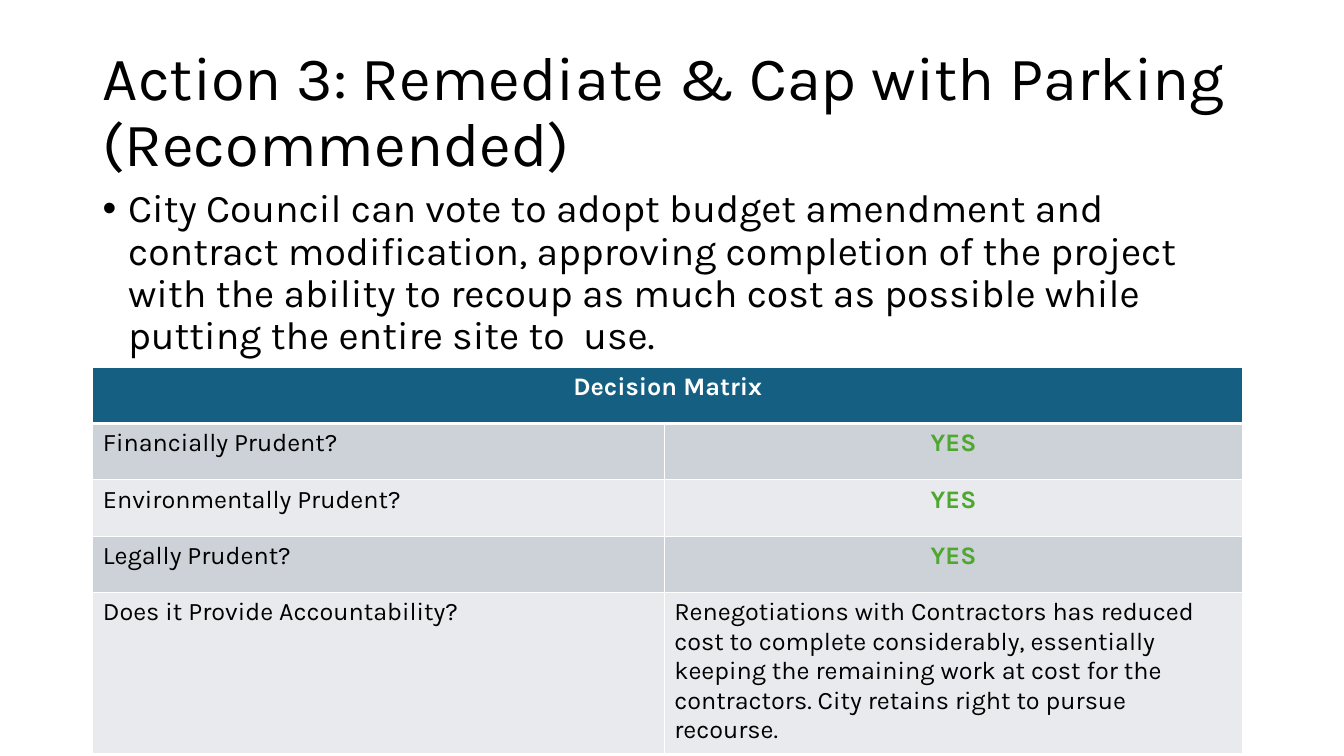
"""Build the decision slide for Action 3: title, proposal bullet and decision matrix."""
from dataclasses import dataclass
from typing import Any

from lxml import etree
from pptx import Presentation
from pptx.dml.color import RGBColor
from pptx.enum.text import MSO_ANCHOR, PP_ALIGN
from pptx.oxml.ns import qn
from pptx.util import Cm, Pt

LEFT, CENTER = PP_ALIGN.LEFT, PP_ALIGN.CENTER
TOP, MIDDLE = MSO_ANCHOR.TOP, MSO_ANCHOR.MIDDLE
FONT = "Karla"
BLACK, WHITE, GREEN = "000000", "FFFFFF", "4EA72E"
HEADER_FILL = "156082"
BAND_FILLS = ("CCD2D8", "E8EAED")
MARGIN, TEXT_WIDTH = 2.34, 29.21
MATRIX_TOP, ROW_HEIGHT = 9.25, 1.42
COLUMN_WIDTHS = (14.4, 14.58)
BORDER_TAGS = ("a:lnL", "a:lnR", "a:lnT", "a:lnB")


@dataclass(frozen=True)
class TextBlock:
    text: str
    top: float
    height: float
    size: float
    anchor: Any
    bulleted: bool = False


@dataclass(frozen=True)
class Answer:
    text: str
    color: str = BLACK
    bold: bool = False
    align: Any = LEFT


YES = Answer("YES", GREEN, True, CENTER)
HEADING = Answer("Decision Matrix", WHITE, True, CENTER)
CRITERIA = (
    ("Financially Prudent?", YES),
    ("Environmentally Prudent?", YES),
    ("Legally Prudent?", YES),
    ("Does it Provide Accountability?", Answer(
        "Renegotiations with Contractors has reduced cost to complete considerably, "
        "essentially keeping the remaining work at cost for the contractors. "
        "City retains right to pursue recourse.")),
)
TEXT_BLOCKS = (
    TextBlock("Action 3: Remediate & Cap with Parking (Recommended)", 1.02, 3.68, 44, MIDDLE),
    TextBlock(
        "City Council can vote to adopt budget amendment and contract modification, "
        "approving completion of the project with the ability to recoup as much cost "
        "as possible while putting the entire site to  use.",
        4.64, 12.09, 28, TOP, True),
)


def rgb(color: str) -> RGBColor:
    return RGBColor.from_string(color)


def apply_format(target: Any, values: dict[str, Any]) -> None:
    for attribute, value in values.items():
        setattr(target, attribute, value)


def format_font(font: Any, size: float, color: str, bold: bool = False) -> None:
    apply_format(font, {"name": FONT, "size": Pt(size), "bold": bold})
    font.color.rgb = rgb(color)


def add_bullet(paragraph: Any) -> None:
    properties = paragraph._p.get_or_add_pPr()
    properties.set("marL", str(Cm(0.64)))
    properties.set("indent", str(-Cm(0.64)))
    etree.SubElement(properties, qn("a:buFont"), typeface="Arial")
    etree.SubElement(properties, qn("a:buChar"), char="•")


def add_text_block(slide: Any, block: TextBlock) -> None:
    box = slide.shapes.add_textbox(Cm(MARGIN), Cm(block.top), Cm(TEXT_WIDTH), Cm(block.height))
    apply_format(box.text_frame, {"word_wrap": True, "vertical_anchor": block.anchor})
    paragraph = box.text_frame.paragraphs[0]
    paragraph.line_spacing = 0.9
    if block.bulleted:
        add_bullet(paragraph)
    run = paragraph.add_run()
    run.text = block.text
    format_font(run.font, block.size, BLACK)


def style_cell(cell: Any, fill: str, bottom_width: float = 1, top_width: float = 1) -> None:
    properties = cell._tc.get_or_add_tcPr()
    for tag, width in zip(BORDER_TAGS, (1, 1, top_width, bottom_width)):
        line = etree.SubElement(properties, qn(tag), w=str(Pt(width)))
        solid = etree.SubElement(line, qn("a:solidFill"))
        etree.SubElement(solid, qn("a:srgbClr"), val=WHITE)
    cell.fill.solid()
    cell.fill.fore_color.rgb = rgb(fill)


def write_cell(cell: Any, answer: Answer) -> None:
    paragraph = cell.text_frame.paragraphs[0]
    paragraph.alignment = answer.align
    run = paragraph.add_run()
    run.text = answer.text
    format_font(run.font, 18, answer.color, answer.bold)


def add_matrix(slide: Any) -> None:
    row_count = len(CRITERIA) + 1
    matrix = slide.shapes.add_table(
        row_count, len(COLUMN_WIDTHS), Cm(MARGIN), Cm(MATRIX_TOP),
        Cm(sum(COLUMN_WIDTHS)), Cm(ROW_HEIGHT * row_count)).table
    for column, width in zip(matrix.columns, COLUMN_WIDTHS):
        column.width = Cm(width)
    for row in matrix.rows:
        row.height = Cm(ROW_HEIGHT)

    for cell in matrix.rows[0].cells:
        style_cell(cell, HEADER_FILL, bottom_width=3)
    matrix.cell(0, 0).merge(matrix.cell(0, 1))
    write_cell(matrix.cell(0, 0), HEADING)

    for index, (question, answer) in enumerate(CRITERIA):
        for column, content in enumerate((Answer(question), answer)):
            cell = matrix.cell(index + 1, column)
            style_cell(cell, BAND_FILLS[index % 2], top_width=1 if index else 3)
            write_cell(cell, content)


def main() -> None:
    presentation = Presentation()
    apply_format(presentation, {"slide_width": Cm(33.87), "slide_height": Cm(19.05)})
    slide = presentation.slides.add_slide(presentation.slide_layouts[6])
    for block in TEXT_BLOCKS:
        add_text_block(slide, block)
    add_matrix(slide)
    presentation.save("out.pptx")


if __name__ == "__main__":
    main()
